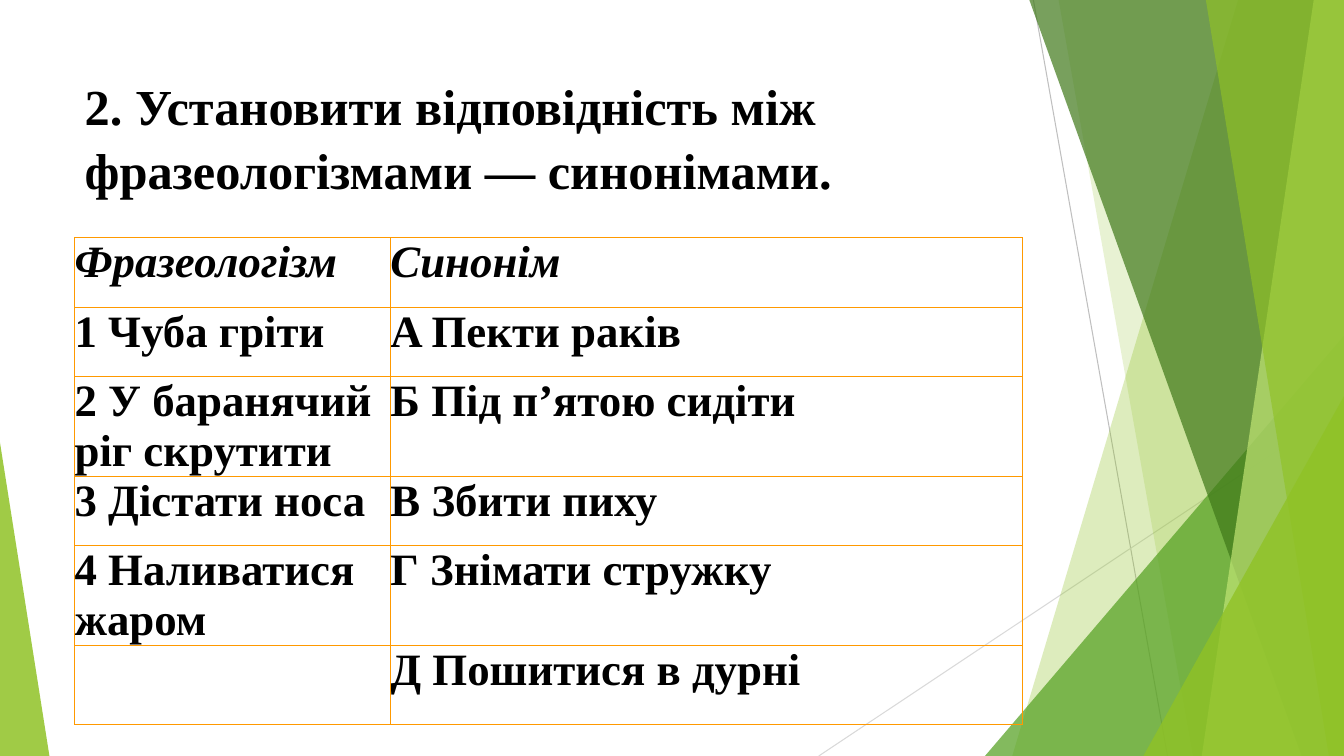
import dataclasses

import pptx
import pptx.dml.color
import pptx.enum.shapes
import pptx.enum.text
import pptx.oxml.ns
import pptx.util

COLORS = {
    "text": "000000", "border": "FF9900",
    "steep line": "BFBFBF", "flat line": "D9D9D9",
    "lime": "90C226", "green": "54A021", "forest": "3F7819", "pale": "C0E474",
}
FONT = "Times New Roman"
ROWS = [
    ("Фразеологізм", "Синонім"),
    ("1 Чуба гріти", "A Пекти раків"),
    ("2 У баранячий ріг скрутити", "Б Під п’ятою сидіти"),
    ("3 Дістати носа", "В Збити пиху"),
    ("4 Наливатися жаром", "Г Знімати стружку"),
    ("", "Д Пошитися в дурні"),
]


@dataclasses.dataclass
class Box:
    """An area in EMU, whose inner areas are given in percent of its size."""
    left: int
    top: int
    width: int
    height: int

    def point(self, x, y):
        return (round(self.left + self.width * x / 100),
                round(self.top + self.height * y / 100))

    def area(self, left, top, width, height):
        return Box(*self.point(left, top), round(self.width * width / 100),
                   round(self.height * height / 100))

    def bounds(self):
        return self.left, self.top, self.width, self.height


def rgb(name):
    return pptx.dml.color.RGBColor.from_string(COLORS[name])


def add_xml(parent, tag, **attributes):
    element = parent.makeelement(pptx.oxml.ns.qn(tag), attributes)
    parent.append(element)
    return element


def paint(shape, color, opacity):
    shape.shadow.inherit = False
    shape.fill.solid()
    shape.fill.fore_color.rgb = rgb(color)
    shape.line.fill.background()
    fill = shape._element.spPr.find(pptx.oxml.ns.qn("a:solidFill"))
    add_xml(fill[0], "a:alpha", val=str(opacity * 1000))


def format_text(frame, size, italic=False):
    for para in frame.paragraphs:
        for span in para.runs:
            span.font.name = FONT
            span.font.size = pptx.util.Pt(size)
            span.font.bold = True
            span.font.italic = italic
            span.font.color.rgb = rgb("text")


def add_line(page, box, start, end, color):
    line = page.shapes.add_connector(
        pptx.enum.shapes.MSO_CONNECTOR.STRAIGHT, *box.point(*start), *box.point(*end))
    line.line.color.rgb = rgb(color)
    line.line.width = pptx.util.Pt(0.75)
    add_xml(line._element.spPr, "a:effectLst")


def add_band(page, box, top_x, bottom_x, color, opacity):
    """A band from a slanted left side to the right edge of the box."""
    builder = page.shapes.build_freeform(*box.point(top_x, 0), scale=1.0)
    corners = [(100, 0), (100, 100), (bottom_x, 100)]
    builder.add_line_segments([box.point(*corner) for corner in corners], close=True)
    paint(builder.convert_to_shape(), color, opacity)


def add_triangle(page, box, apex, color, opacity):
    triangle = page.shapes.add_shape(
        pptx.enum.shapes.MSO_SHAPE.ISOSCELES_TRIANGLE, *box.bounds())
    triangle.adjustments[0] = apex
    paint(triangle, color, opacity)


def add_decoration(page, box):
    # Thin lines
    add_line(page, box, (76.89, 0), (86.87, 100), "steep line")
    add_line(page, box, (100, 53.73), (60.92, 100), "flat line")
    # Translucent bands and triangles, from back to front
    add_band(page, box, 92.12, 75.32, "lime", 30)
    add_band(page, box, 78.77, 88.75, "lime", 20)
    add_triangle(page, box.area(73.29, 44.4, 26.71, 55.6), 1, "green", 72)
    add_band(page, box, 76.59, 96.85, "forest", 70)
    add_band(page, box, 97.75, 89.42, "pale", 70)
    add_band(page, box, 89.72, 98.87, "lime", 65)
    add_triangle(page, box.area(85.07, 52.4, 14.93, 47.6), 1, "lime", 80)
    add_triangle(page, box.area(0, 58.53, 3.68, 41.47), 0, "lime", 85)


def add_title(page, box):
    title = page.shapes.title
    title.left, title.top, title.width, title.height = box.bounds()
    frame = title.text_frame
    frame.text = "2. Установити відповідність між фразеологізмами — синонімами."
    frame.word_wrap = True
    frame.auto_size = pptx.enum.text.MSO_AUTO_SIZE.NONE
    frame.vertical_anchor = pptx.enum.text.MSO_ANCHOR.TOP
    frame.paragraphs[0].alignment = pptx.enum.text.PP_ALIGN.LEFT
    frame.paragraphs[0].line_spacing = 1.05
    format_text(frame, 36)


def format_cell(cell):
    cell.margin_left = cell.margin_right = cell.margin_top = cell.margin_bottom = 0
    properties = cell._tc.get_or_add_tcPr()
    for side in ("a:lnL", "a:lnR", "a:lnT", "a:lnB"):
        border = add_xml(properties, side, w=str(pptx.util.Pt(0.75)))
        add_xml(add_xml(border, "a:solidFill"), "a:srgbClr", val=COLORS["border"])
    cell.fill.background()


def add_matching_table(page, box):
    table = page.shapes.add_table(len(ROWS), 2, *box.bounds()).table
    table.first_row = table.horz_banding = False
    # The second column is twice as wide; the last row is a little taller
    for column, share in zip(table.columns, (1, 2)):
        column.width = round(box.width * share / 3)
    shares = [0.163] * (len(ROWS) - 1) + [0.185]
    for row, share in zip(table.rows, shares):
        row.height = round(box.height * share)
    for r, texts in enumerate(ROWS):
        for c, text in enumerate(texts):
            cell = table.cell(r, c)
            format_cell(cell)
            if text:
                cell.text_frame.text = text
                format_text(cell.text_frame, 32, italic=r == 0)


def main():
    deck = pptx.Presentation()
    deck.slide_width = pptx.util.Inches(13.33)
    deck.slide_height = pptx.util.Inches(7.5)
    page = deck.slides.add_slide(deck.slide_layouts[5])
    slide_box = Box(0, 0, deck.slide_width, deck.slide_height)
    add_decoration(page, slide_box)
    add_title(page, slide_box.area(5.55, 8.93, 70.52, 22.67))
    add_matching_table(page, slide_box.area(5.55, 31.47, 70.52, 56.4))
    deck.save("out.pptx")


if __name__ == "__main__":
    main()
